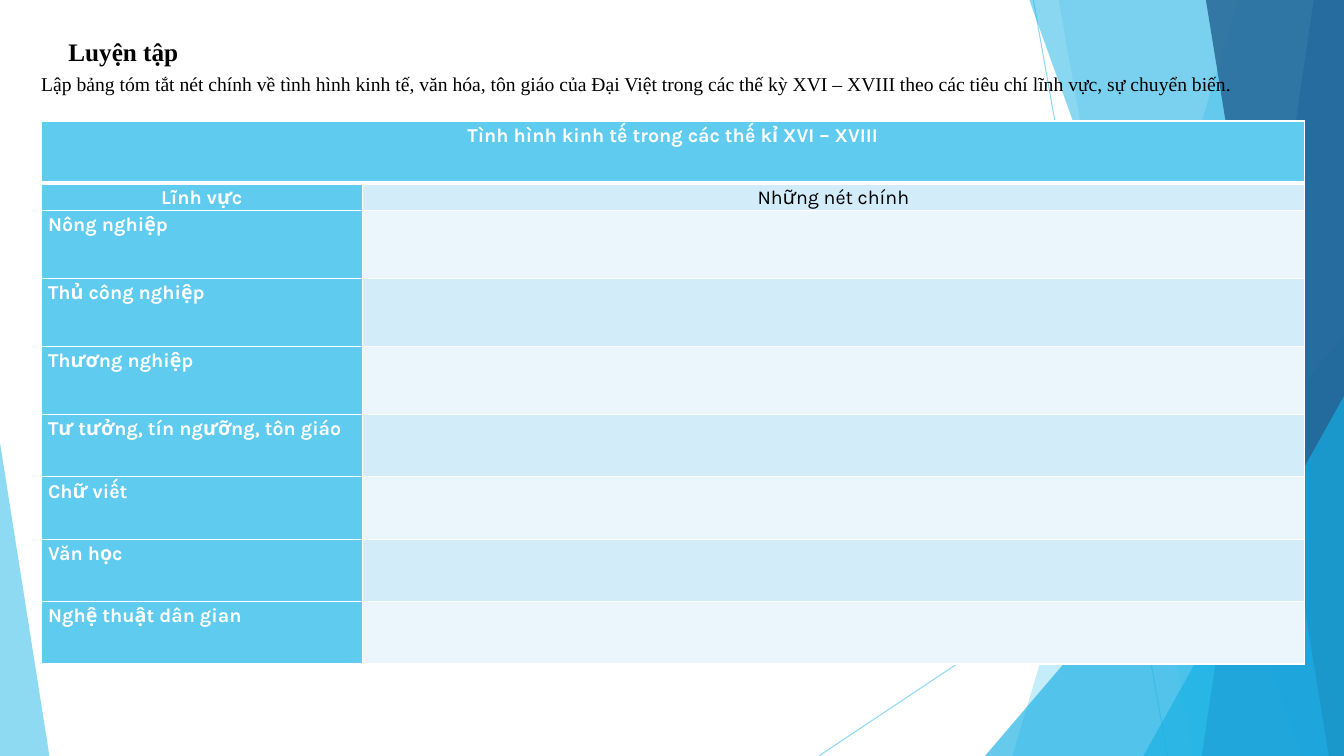
import lxml.etree
import pptx
import pptx.dml.color
import pptx.enum.shapes
import pptx.enum.text
import pptx.oxml.ns
import pptx.util

COLOURS = {
    "sky": "5FCBEF", "azure": "17B0E4", "blue": "2E83C3", "navy": "226292",
    "band": "D2ECF9", "pale": "EAF6FC", "white": "FFFFFF", "black": "000000",
}
qn = pptx.oxml.ns.qn
SHAPES = pptx.enum.shapes

deck = pptx.Presentation()
deck.slide_width = pptx.util.Inches(13.33)
deck.slide_height = pptx.util.Inches(7.5)
page = deck.slides.add_slide(deck.slide_layouts[6])


def emu(*shares):
    """Turn alternating percentages of slide width and height into EMU."""
    sides = (deck.slide_width, deck.slide_height)
    return [round(share * sides[i % 2] / 100) for i, share in enumerate(shares)]


def write(frame, text, size=14, font="Times New Roman", colour="black",
          bold=False, centred=False, spacing=1.0):
    frame.word_wrap = True
    para = frame.paragraphs[0]
    align = pptx.enum.text.PP_ALIGN
    para.alignment = align.CENTER if centred else align.LEFT
    para.line_spacing = spacing
    span = para.add_run()
    span.text = text
    span.font.size = pptx.util.Pt(size)
    span.font.name = font
    span.font.bold = bold
    span.font.color.rgb = pptx.dml.color.RGBColor.from_string(COLOURS[colour])


# Background rays: thin lines, facets and triangles, from back to front
rays = [(76.89, 0, 86.87, 100), (100, 53.73, 60.92, 100)]
facets_and_triangles = [
    # facet: x at top, x at bottom; triangle: left, top, width, apex position
    ((92.12, 75.32), "sky", 36),
    ((78.77, 88.75), "sky", 20),
    ((73.29, 44.4, 26.71, 1), "azure", 66),
    ((76.59, 96.85), "azure", 50),
    ((97.75, 89.42), "blue", 70),
    ((89.72, 98.87), "navy", 80),
    ((85.07, 52.4, 14.93, 1), "azure", 66),
    ((0, 58.53, 3.68, 0), "sky", 70),
]
painted = []
for ends in rays:
    ray = page.shapes.add_connector(SHAPES.MSO_CONNECTOR.STRAIGHT, *emu(*ends))
    ray.line.width = pptx.util.Pt(0.75)
    lxml.etree.SubElement(ray._element.spPr, qn("a:effectLst"))
    painted.append((ray, ray.line.fill, "sky", 70))

for geometry, colour, opacity in facets_and_triangles:
    if len(geometry) == 2:
        top_x, bottom_x = geometry
        corners = [emu(x, y) for x, y in
                   ((top_x, 0), (100, 0), (100, 100), (bottom_x, 100))]
        builder = page.shapes.build_freeform(*corners[0])
        builder.add_line_segments(corners[1:], close=True)
        shape = builder.convert_to_shape()
    else:
        left, top, width, apex = geometry
        shape = page.shapes.add_shape(SHAPES.MSO_SHAPE.ISOSCELES_TRIANGLE,
                                      *emu(left, top, width, 100 - top))
        shape.adjustments[0] = apex
    shape.shadow.inherit = False
    shape.line.fill.background()
    painted.append((shape, shape.fill, colour, opacity))

for shape, fill, colour, opacity in painted:
    fill.solid()
    fill.fore_color.rgb = pptx.dml.color.RGBColor.from_string(COLOURS[colour])
    for tint in shape._element.spPr.iter(qn("a:srgbClr")):
        lxml.etree.SubElement(tint, qn("a:alpha"), val=str(opacity * 1000))

# Heading and task
heading = page.shapes.add_textbox(*emu(4.35, 4.13, 11.5, 5.33))
write(heading.text_frame, "Luyện tập", size=18, bold=True)
task = page.shapes.add_textbox(*emu(2.33, 8.8, 94.5, 4.5))
write(task.text_frame,
      "Lập bảng tóm tắt nét chính về tình hình kinh tế, văn hóa, tôn giáo của "
      "Đại Việt trong các thế kỳ XVI – XVIII theo các tiêu chí lĩnh vực, "
      "sự chuyển biến.")

# Summary table
rows = [
    ("Tình hình kinh tế trong các thế kỉ XVI – XVIII", 8.25),
    ("Lĩnh vực", 3.6),
    ("Nông nghiệp", 9),
    ("Thủ công nghiệp", 9),
    ("Thương nghiệp", 9),
    ("Tư tưởng, tín ngưỡng, tôn giáo", 8.25),
    ("Chữ viết", 8.25),
    ("Văn học", 8.25),
    ("Nghệ thuật dân gian", 8.25),
]
column_widths = (23.93, 70.07)
table = page.shapes.add_table(
    len(rows), 2, *emu(3.05, 16, sum(column_widths),
                       sum(height for _, height in rows))).table
for column, width in zip(table.columns, column_widths):
    column.width = emu(width)[0]
table.cell(0, 0).merge(table.cell(0, 1))

for r, (topic, height) in enumerate(rows):
    table.rows[r].height = emu(0, height)[1]
    for c in range(2):
        cell = table.cell(r, c)
        cell.margin_left = cell.margin_right = pptx.util.Inches(0.07)
        cell.margin_top = cell.margin_bottom = 0
        properties = cell._tc.get_or_add_tcPr()
        for edge in ("lnL", "lnR", "lnT", "lnB"):
            thick = (r, edge) in ((0, "lnB"), (1, "lnT"))
            border = lxml.etree.SubElement(properties, qn("a:" + edge),
                                           w=str(pptx.util.Pt(3 if thick else 1)))
            paint = lxml.etree.SubElement(border, qn("a:solidFill"))
            lxml.etree.SubElement(paint, qn("a:srgbClr"), val=COLOURS["white"])
        shade = "sky" if c == 0 or r == 0 else ("band" if r % 2 else "pale")
        cell.fill.solid()
        cell.fill.fore_color.rgb = pptx.dml.color.RGBColor.from_string(COLOURS[shade])
    write(table.cell(r, 0).text_frame, topic, font="Karla", colour="white",
          bold=True, centred=r < 2, spacing=1.15)
write(table.cell(1, 1).text_frame, "Những nét chính", font="Karla",
      centred=True, spacing=1.15)

deck.save("out.pptx")
